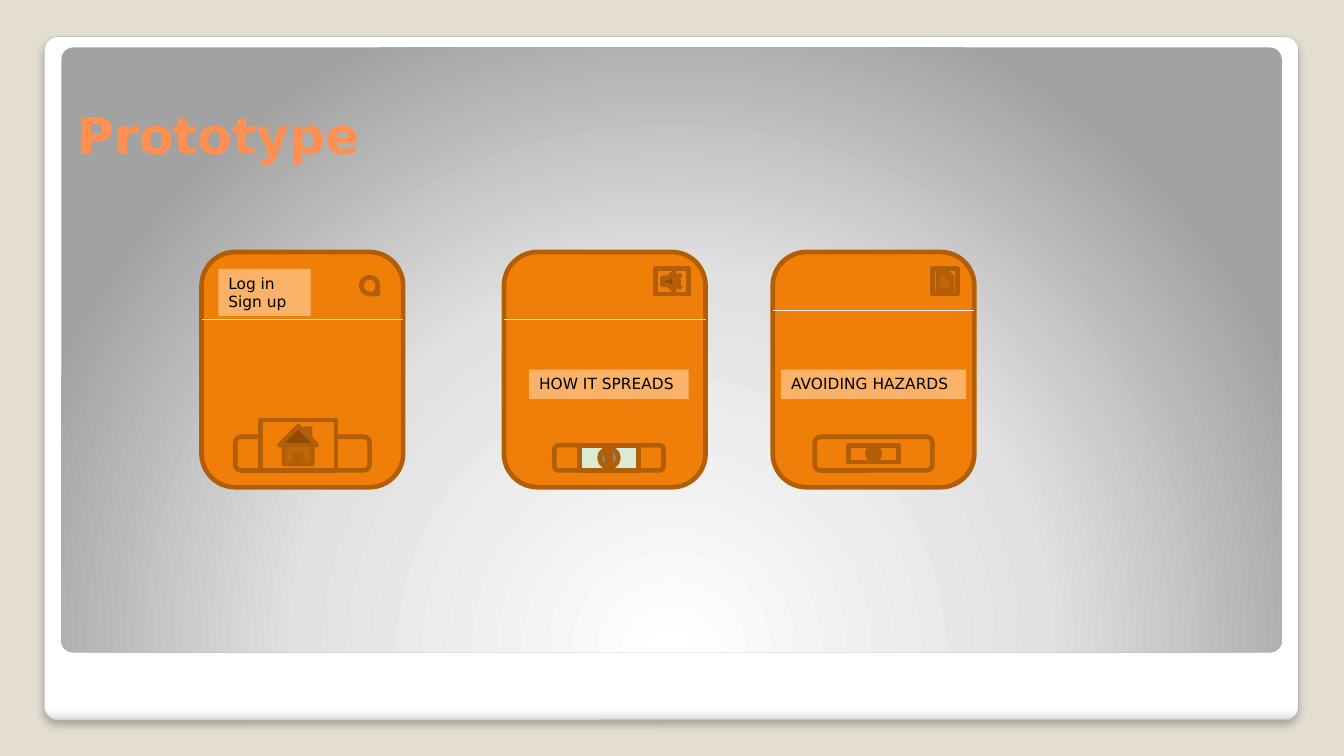
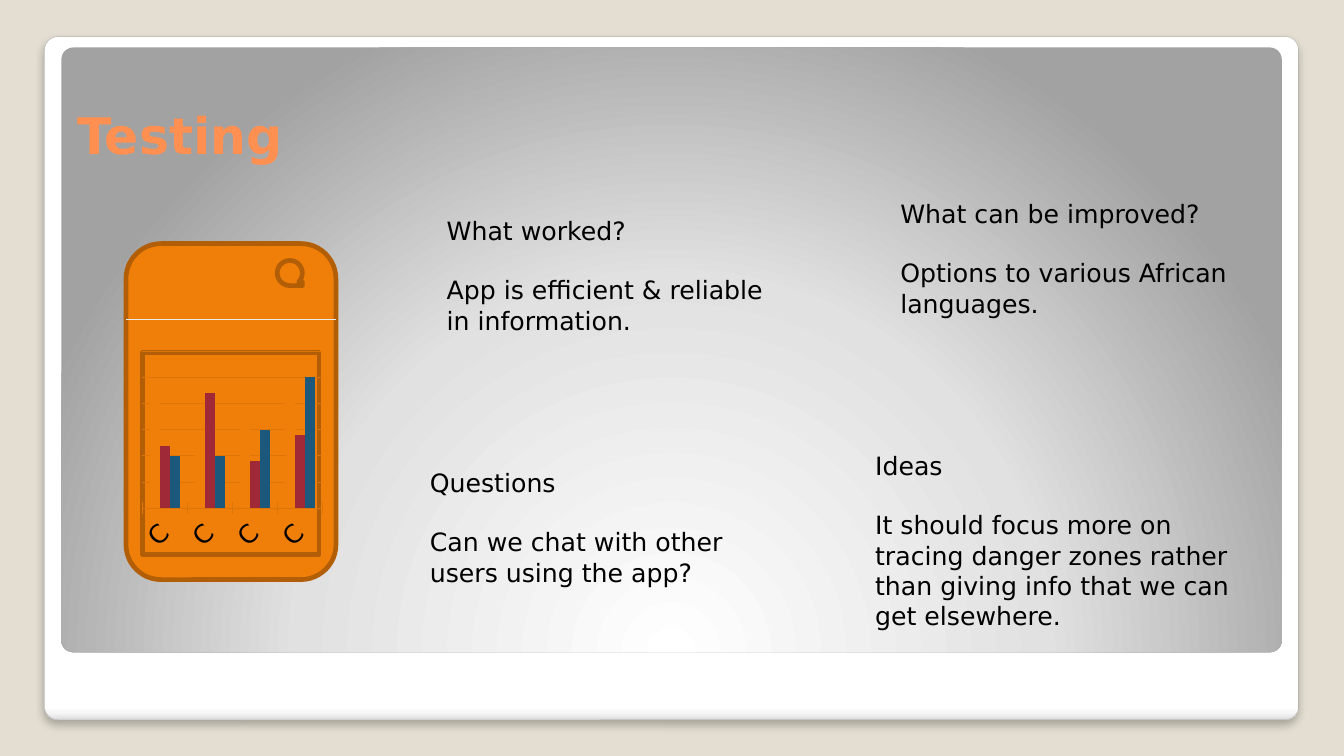
from dataclasses import dataclass

from pptx import Presentation
from pptx.chart.data import CategoryChartData
from pptx.dml.color import RGBColor
from pptx.enum.chart import XL_CHART_TYPE, XL_TICK_MARK
from pptx.enum.shapes import MSO_CONNECTOR, MSO_SHAPE
from pptx.enum.text import MSO_ANCHOR, MSO_AUTO_SIZE, PP_ALIGN
from pptx.oxml import parse_xml
from pptx.oxml.ns import nsdecls, qn
from pptx.presentation import Presentation as Deck
from pptx.shapes.autoshape import Shape
from pptx.slide import Slide
from pptx.util import Inches, Pt

COLUMNS, ROWS = 160, 90
CELL = Inches(1) / 12
FONT = "DejaVu Sans"

BLACK = RGBColor(0x00, 0x00, 0x00)
SAND = RGBColor(0xE3, 0xDE, 0xD1)
WHITE = RGBColor(0xFF, 0xFF, 0xFF)
FRAME_EDGE = RGBColor(0xA4, 0xA4, 0xA4)
TITLE_ORANGE = RGBColor(0xFF, 0x90, 0x52)
ORANGE = RGBColor(0xF0, 0x7F, 0x09)
BROWN = RGBColor(0xB2, 0x5E, 0x07)
PEACH = RGBColor(0xF9, 0xB2, 0x68)
MINT = RGBColor(0xD9, 0xEA, 0xD5)
PALE = RGBColor(0xEB, 0xEB, 0xEB)
GRID_ORANGE = RGBColor(0xDE, 0x75, 0x08)
RED = RGBColor(0x9F, 0x29, 0x36)
BLUE = RGBColor(0x1B, 0x58, 0x7C)


@dataclass(frozen=True)
class Area:
    column: float
    row: float
    columns: float
    rows: float

    def box(self) -> tuple[int, int, int, int]:
        left, top, width, height = (
            round(cells * CELL)
            for cells in (self.column, self.row, self.columns, self.rows)
        )
        return left, top, width, height


@dataclass(frozen=True)
class Widget:
    kind: MSO_SHAPE
    area: Area
    fill: RGBColor = ORANGE


@dataclass(frozen=True)
class Label:
    area: Area
    lines: tuple[str, ...]


@dataclass(frozen=True)
class Phone:
    area: Area
    header_row: float
    header_color: RGBColor
    widgets: tuple[Widget, ...]
    label: Label | None = None


@dataclass(frozen=True)
class Note:
    area: Area
    heading: str
    body: str


PROTOTYPES = (
    Phone(
        Area(24, 30, 24, 28), 38, MINT,
        (
            Widget(MSO_SHAPE.FLOWCHART_SEQUENTIAL_ACCESS_STORAGE, Area(43, 33, 2, 2)),
            Widget(MSO_SHAPE.ROUNDED_RECTANGLE, Area(28, 52, 16, 4)),
            Widget(MSO_SHAPE.ACTION_BUTTON_HOME, Area(31, 50, 9, 6)),
        ),
        Label(Area(26, 32, 11, 5.6), ("Log in", "Sign up")),
    ),
    Phone(
        Area(60, 30, 24, 28), 38, PALE,
        (
            Widget(MSO_SHAPE.ACTION_BUTTON_SOUND, Area(78, 32, 4, 3)),
            Widget(MSO_SHAPE.ROUNDED_RECTANGLE, Area(66, 53, 13, 3)),
            Widget(MSO_SHAPE.ACTION_BUTTON_INFORMATION, Area(69, 53, 7, 3), MINT),
        ),
        Label(Area(63, 44, 19, 3.5), ("HOW IT SPREADS",)),
    ),
    Phone(
        Area(92, 30, 24, 28), 37, PALE,
        (
            Widget(MSO_SHAPE.ACTION_BUTTON_DOCUMENT, Area(111, 32, 3, 3)),
            Widget(MSO_SHAPE.ROUNDED_RECTANGLE, Area(97, 52, 14, 4)),
            Widget(MSO_SHAPE.ACTION_BUTTON_INFORMATION, Area(101, 53, 6, 2)),
        ),
        Label(Area(93, 44, 22, 3.5), ("AVOIDING HAZARDS",)),
    ),
)

TESTED_PHONE = Phone(
    Area(15, 29, 25, 40), 38, PALE,
    (
        Widget(MSO_SHAPE.FLOWCHART_SEQUENTIAL_ACCESS_STORAGE, Area(33, 31, 3, 3)),
        Widget(MSO_SHAPE.RECTANGLE, Area(17, 42, 21, 24)),
    ),
)

NOTES = (
    Note(Area(52, 25, 42, 19.4), "What worked?",
         "App is efficient & reliable in information."),
    Note(Area(106, 23, 45, 34), "What can be improved?",
         "Options to various African languages."),
    Note(Area(50, 55, 43.7, 23), "Questions",
         "Can we chat with other users using the app?"),
    Note(Area(103, 53, 45, 30), "Ideas",
         "It should focus more on tracing danger zones rather than giving info "
         "that we can get elsewhere."),
)

SERIES = (
    ("Series 1", (86, 50, 70, 90), ORANGE),
    ("Series 2", (48, 88, 36, 56), RED),
    ("Series 3", (40, 40, 60, 100), BLUE),
)


def add_widget(page: Slide, widget: Widget) -> Shape:
    shape = page.shapes.add_shape(widget.kind, *widget.area.box())
    shape.shadow.inherit = False
    shape.fill.solid()
    shape.fill.fore_color.rgb = widget.fill
    shape.line.color.rgb = BROWN
    shape.line.width = Pt(3.35)
    return shape


def set_gradient(shape: Shape, stops: dict[int, str], direction: str) -> None:
    marks = "".join(
        f'<a:gs pos="{position * 1000}"><a:srgbClr val="{color}"/></a:gs>'
        for position, color in stops.items()
    )
    gradient = parse_xml(
        f'<a:gradFill {nsdecls("a")} rotWithShape="1">'
        f"<a:gsLst>{marks}</a:gsLst>{direction}</a:gradFill>"
    )
    properties = shape.element.spPr
    properties.replace(properties.find(qn("a:solidFill")), gradient)


def style_master(deck: Deck, page: Slide) -> None:
    master = deck.slide_master
    master.background.fill.solid()
    master.background.fill.fore_color.rgb = SAND
    card, panel = (
        add_widget(page, Widget(MSO_SHAPE.ROUNDED_RECTANGLE, area, WHITE))
        for area in (Area(5.3, 4.35, 149.3, 81.35), Area(7.3, 5.65, 145.3, 72))
    )
    set_gradient(
        card,
        {0: "FFFFFF", 98: "FFFFFF", 99: "F7F7F7", 100: "DADADA"},
        '<a:lin ang="5400000" scaled="0"/>',
    )
    card.line.color.rgb = FRAME_EDGE
    card.line.width = Pt(0.16)
    card.element.spPr.find(qn("a:effectLst")).append(parse_xml(
        f'<a:outerShdw {nsdecls("a")} blurRad="{Pt(6)}" dist="{Pt(4)}" dir="5400000">'
        '<a:srgbClr val="000000"><a:alpha val="25000"/></a:srgbClr></a:outerShdw>'
    ))
    set_gradient(
        panel,
        {0: "FFFFFF", 55: "E1E1E1", 100: "A2A2A2"},
        '<a:path path="circle">'
        '<a:fillToRect l="50000" t="175000" r="50000" b="-75000"/></a:path>',
    )
    panel.line.fill.background()
    for order, frame in enumerate((card, panel)):
        frame.adjustments[0] = 0.02
        frame.element.nvSpPr.cNvPr.set("id", str(100 + order))
        master.shapes.element.insert(2 + order, frame.element)


def add_page(deck: Deck, title: str) -> Slide:
    page = deck.slides.add_slide(deck.slide_layouts.get_by_name("Title Only"))
    box = page.shapes.title
    box.left, box.top, box.width, box.height = Area(8, 10, 144, 12).box()
    frame = box.text_frame
    frame.text = title
    frame.auto_size = MSO_AUTO_SIZE.NONE
    frame.vertical_anchor = MSO_ANCHOR.MIDDLE
    para = frame.paragraphs[0]
    para.alignment = PP_ALIGN.LEFT
    para.font.name = FONT
    para.font.size = Pt(36)
    para.font.bold = True
    para.font.color.rgb = TITLE_ORANGE
    return page


def add_text(page: Slide, area: Area, lines: tuple[str, ...], size: float,
             gap: float = 0) -> Shape:
    box = page.shapes.add_textbox(*area.box())
    frame = box.text_frame
    frame.word_wrap = True
    frame.text = "\n".join(lines)
    for order, para in enumerate(frame.paragraphs):
        para.font.name = FONT
        para.font.size = Pt(size)
        para.font.color.rgb = BLACK
        para.space_before = Pt(gap if order else 0)
    return box


def add_phone(page: Slide, phone: Phone) -> None:
    add_widget(page, Widget(MSO_SHAPE.ROUNDED_RECTANGLE, phone.area))
    left, top, width, _ = Area(
        phone.area.column, phone.header_row, phone.area.columns, 0
    ).box()
    header = page.shapes.add_connector(
        MSO_CONNECTOR.STRAIGHT, left, top, left + width, top
    )
    header.line.color.rgb = phone.header_color
    header.line.width = Pt(0.75)
    header.element.spPr.append(parse_xml(f'<a:effectLst {nsdecls("a")}/>'))
    for widget in phone.widgets:
        add_widget(page, widget)
    if phone.label:
        box = add_text(page, phone.label.area, phone.label.lines, 11)
        box.fill.solid()
        box.fill.fore_color.rgb = PEACH


def add_results_chart(page: Slide, area: Area) -> None:
    data = CategoryChartData()
    data.categories = [f"Category {number}" for number in range(1, 5)]
    for name, values, _ in SERIES:
        data.add_series(name, values)
    chart = page.shapes.add_chart(
        XL_CHART_TYPE.COLUMN_CLUSTERED, *area.box(), data
    ).chart
    chart.has_legend = False
    chart.has_title = False
    chart.font.name = FONT
    chart.font.size = Pt(18)
    chart.font.color.rgb = BLACK
    chart.category_axis.major_tick_mark = XL_TICK_MARK.CROSS
    chart.category_axis.format.line.color.rgb = GRID_ORANGE
    scale = chart.value_axis
    scale.visible = False
    scale.minimum_scale, scale.maximum_scale, scale.major_unit = 0, 120, 20
    scale.major_gridlines.format.line.color.rgb = GRID_ORANGE
    plot = chart.plots[0]
    plot.gap_width = 150
    plot.overlap = 0
    plot.vary_by_categories = False
    for series, (_, _, color) in zip(plot.series, SERIES):
        series.format.fill.solid()
        series.format.fill.fore_color.rgb = color
    plot_area = chart.element.chart.plotArea
    for layout in plot_area.findall(qn("c:layout")):
        plot_area.remove(layout)
    shares = "".join(
        f'<c:{name} val="{share}"/>'
        for name, share in (("x", 0.16), ("y", 0.07), ("w", 0.69), ("h", 0.72))
    )
    plot_area.insert(0, parse_xml(
        f'<c:layout {nsdecls("c")}><c:manualLayout><c:layoutTarget val="inner"/>'
        f'<c:xMode val="edge"/><c:yMode val="edge"/>{shares}'
        "</c:manualLayout></c:layout>"
    ))


def main() -> None:
    deck = Presentation()
    deck.slide_width = round(COLUMNS * CELL)
    deck.slide_height = round(ROWS * CELL)

    prototype = add_page(deck, "Prototype")
    style_master(deck, prototype)
    for phone in PROTOTYPES:
        add_phone(prototype, phone)

    testing = add_page(deck, "Testing")
    for note in NOTES:
        add_text(testing, note.area, (note.heading, note.body), 18, gap=21)
    add_phone(testing, TESTED_PHONE)
    add_results_chart(testing, Area(12, 40, 31, 26))

    deck.save("out.pptx")


if __name__ == "__main__":
    main()
